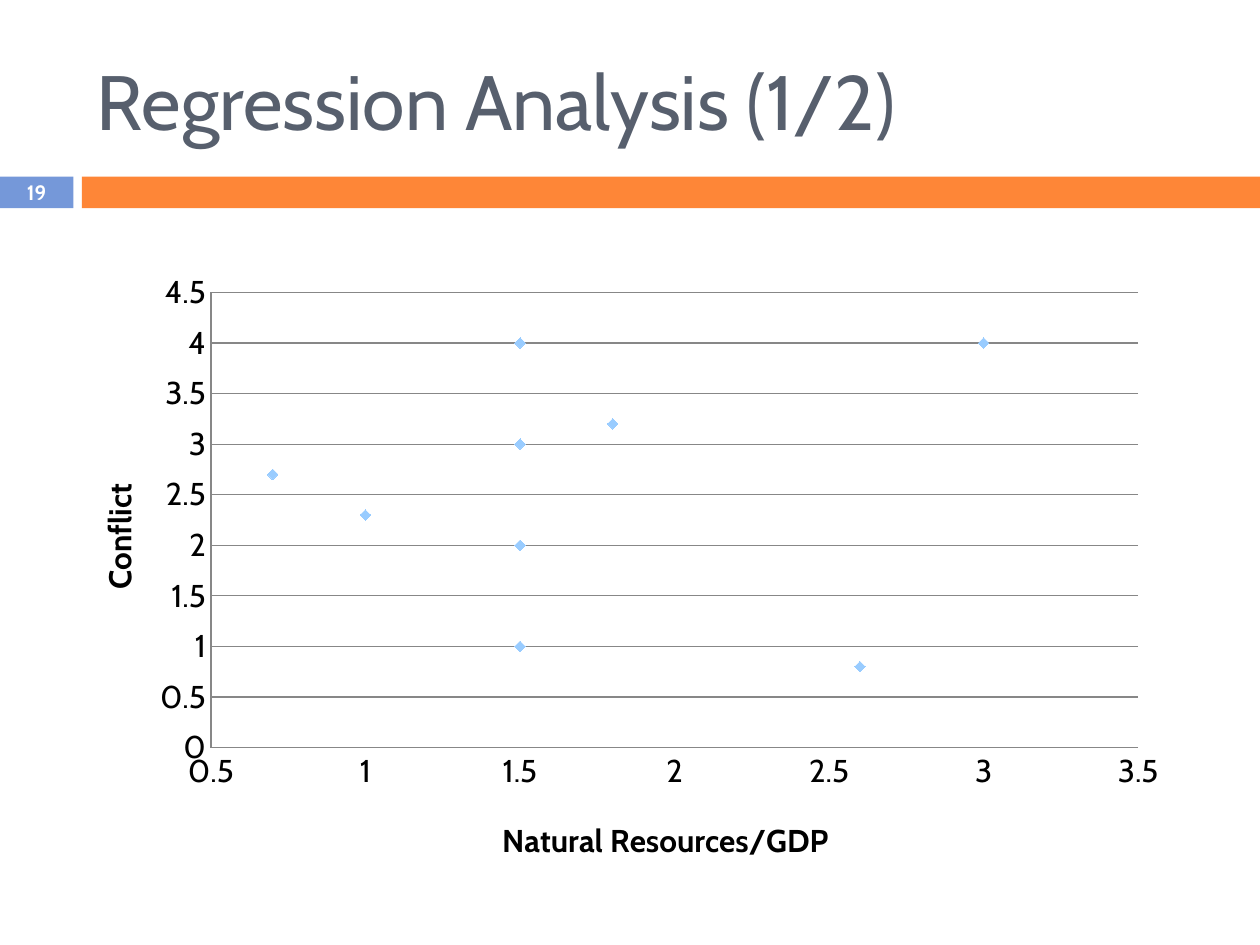
from lxml import etree
from pptx import Presentation
from pptx.chart.data import XyChartData
from pptx.dml.color import RGBColor
from pptx.enum.chart import XL_CHART_TYPE as ChartType, XL_MARKER_STYLE as Marker
from pptx.enum.chart import XL_TICK_MARK as TickMark
from pptx.enum.shapes import MSO_SHAPE as Shape
from pptx.enum.text import MSO_ANCHOR as Anchor, PP_ALIGN as Align
from pptx.oxml.ns import qn
from pptx.util import Cm, Pt

POINTS = [(0.7, 2.7), (1.8, 3.2), (2.6, 0.8), (3, 4), (1.5, 1),
          (1.5, 4), (1.5, 2), (1.5, 3), (1, 2.3)]


def color(hex_code):
    return RGBColor.from_string(hex_code)


def place(element, index, **fractions):
    """Fix a chart part at fractions of the chart area."""
    for old in element.findall(qn("c:layout")):
        element.remove(old)
    layout = etree.Element(qn("c:layout"))
    manual = etree.SubElement(layout, qn("c:manualLayout"))
    if "w" in fractions:
        etree.SubElement(manual, qn("c:layoutTarget")).set("val", "inner")
    for mode in ("xMode", "yMode"):
        etree.SubElement(manual, qn(f"c:{mode}")).set("val", "edge")
    for name, value in fractions.items():
        etree.SubElement(manual, qn(f"c:{name}")).set("val", str(value))
    element.insert(index, layout)


class SlideBuilder:
    font = "Cabin"
    ink, heading, white = "000000", "575F6D", "FFFFFF"
    blue, orange, marker, grid = "7598D9", "FE8637", "99CCFF", "878787"

    def __init__(self, page):
        self.page = page

    def bar(self, left, top, width, height, fill):
        box = self.page.shapes.add_shape(
            Shape.RECTANGLE, Cm(left), Cm(top), Cm(width), Cm(height))
        box.shadow.inherit = False
        box.fill.solid()
        box.fill.fore_color.rgb = color(fill)
        box.line.fill.background()

    def text(self, left, top, width, height, words, size, ink,
             bold=False, align=Align.LEFT, margin=0.25):
        box = self.page.shapes.add_textbox(Cm(left), Cm(top), Cm(width), Cm(height))
        frame = box.text_frame
        frame.word_wrap = True
        frame.vertical_anchor = Anchor.MIDDLE
        frame.margin_left = frame.margin_right = Cm(margin)
        frame.margin_top = frame.margin_bottom = Cm(0)
        para = frame.paragraphs[0]
        para.text = words
        para.alignment = align
        self.style(para.font, size, ink, bold)

    def style(self, font, size, ink, bold=False):
        font.name, font.size, font.bold = self.font, Pt(size), bold
        font.color.rgb = color(ink)

    def axis(self, axis, title, low, high, step, title_x, title_y):
        axis.minimum_scale, axis.maximum_scale, axis.major_unit = low, high, step
        axis.major_tick_mark = axis.minor_tick_mark = TickMark.NONE
        axis.has_major_gridlines = False
        axis.format.line.color.rgb = color(self.grid)
        axis.format.line.width = Pt(0.75)
        axis.tick_labels.number_format = "General"
        axis.tick_labels.number_format_is_linked = False
        para = axis.axis_title.text_frame.paragraphs[0]
        para.text = title
        self.style(para.font, 18, self.ink, bold=True)
        place(axis.axis_title._element, 1, x=title_x, y=title_y)

    def scatter(self, left, top, width, height, points):
        data = XyChartData()
        series_data = data.add_series("Series 1")
        for x, y in points:
            series_data.add_data_point(x, y)
        chart = self.page.shapes.add_chart(
            ChartType.XY_SCATTER, Cm(left), Cm(top), Cm(width), Cm(height), data).chart
        chart.has_legend = chart.has_title = False
        self.style(chart.font, 18, self.ink)
        chart.plots[0].vary_by_categories = False

        # Axes
        self.axis(chart.category_axis, "Natural Resources/GDP", 0.5, 3.5, 0.5, 0.39, 0.89)
        self.axis(chart.value_axis, "Conflict", 0, 4.5, 0.5, 0.03, 0.35)
        chart.value_axis.has_major_gridlines = True
        grid = chart.value_axis.major_gridlines.format.line
        grid.color.rgb = color(self.grid)
        grid.width = Pt(0.75)
        plot_area = chart.plots[0]._element.getparent()
        place(plot_area, 0, x=0.136, y=0.051, w=0.825, h=0.734)

        # Points without a joining line
        series = chart.plots[0].series[0]
        series.smooth = False
        series.format.line.fill.background()
        series.marker.style = Marker.DIAMOND
        series.marker.size = 6
        series.marker.format.fill.solid()
        series.marker.format.fill.fore_color.rgb = color(self.marker)
        series.marker.format.line.fill.background()


def main():
    deck = Presentation()
    deck.slide_width, deck.slide_height = Cm(25.4), Cm(19.05)
    slide = SlideBuilder(deck.slides.add_slide(deck.slide_layouts[6]))

    # Header band
    slide.bar(0, 3.56, 1.48, 0.64, slide.blue)
    slide.bar(1.65, 3.56, 23.75, 0.64, slide.orange)

    # Title and page number
    slide.text(1.7, 0.64, 22.66, 2.74, "Regression Analysis (1/2)", 44, slide.heading)
    slide.text(0, 3.53, 1.48, 0.69, "19", 11.9, slide.white,
               bold=True, align=Align.CENTER, margin=0)

    # Scatter chart
    slide.scatter(1.17, 5.26, 22.66, 12.5, POINTS)

    deck.save("out.pptx")


if __name__ == "__main__":
    main()
